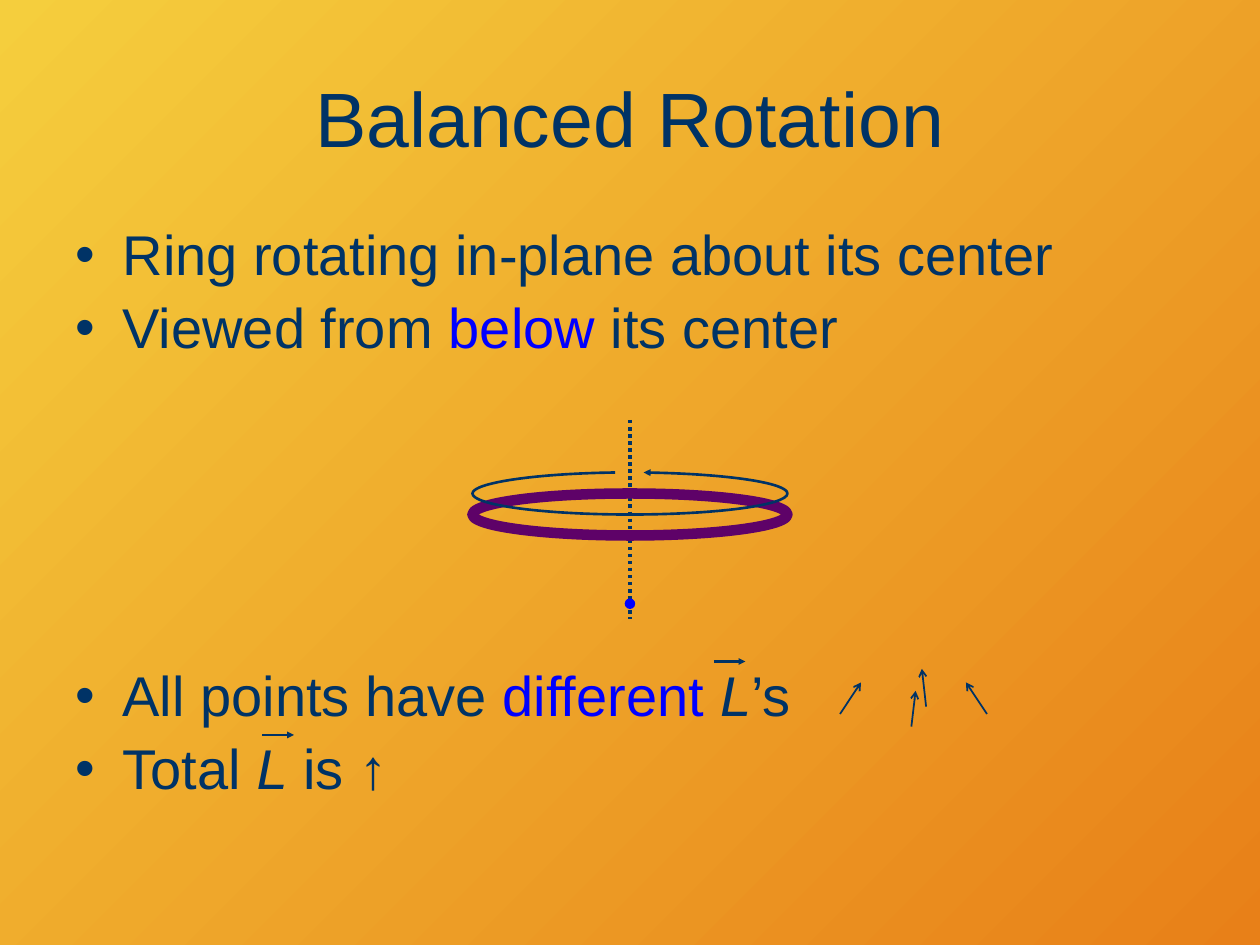
"""Build the Balanced Rotation slide."""
from lxml.etree import SubElement
from pptx import Presentation
from pptx.dml.color import RGBColor
from pptx.enum.dml import MSO_LINE
from pptx.enum.shapes import MSO_CONNECTOR, MSO_SHAPE
from pptx.enum.text import MSO_ANCHOR, PP_ALIGN
from pptx.oxml.ns import qn
from pptx.util import Emu, Pt

PX = 7620
FONT = "Arial"
NAVY = RGBColor(0x00, 0x33, 0x66)
BLUE = RGBColor(0x00, 0x00, 0xFF)
PURPLE = RGBColor(0x5E, 0x02, 0x68)
YELLOW = RGBColor(0xF5, 0xCE, 0x3D)
ORANGE = RGBColor(0xE8, 0x80, 0x18)

TITLE = "Balanced Rotation"
SETUP = (210, 70, [("Ring rotating in-plane about its center", NAVY, False)])
VIEW = (280, 80, [("Viewed from ", NAVY, False), ("below", BLUE, False),
                  (" its center", NAVY, False)])
PARTS = (630, 70, [("All points have ", NAVY, False), ("different ", BLUE, False),
                   ("L", NAVY, True), ("’s", NAVY, False)])
TOTAL = (700, 70, [("Total ", NAVY, False), ("L", NAVY, True),
                   (" is ↑", NAVY, False)])
AXIS = (600, 400, 600, 590)
RING = (450, 470, 300, 40)
VIEWPOINT = (595, 570, 10, 10)
SPIN_START = (613, 450)
SPIN_CURVES = [
    [(690, 451), (750, 460), (750, 470)],
    [(750, 481), (683, 490), (600, 490)],
    [(517, 490), (450, 481), (450, 470)],
    [(450, 460), (509, 451), (586, 450)],
]
PARTS_BAR = (680, 630, 710, 630)
TOTAL_BAR = (250, 700, 280, 700)
MOMENTA = [(800, 680, 820, 650), (940, 680, 920, 650),
           (868, 692, 872, 658), (882, 673, 878, 637)]


def px(*lengths):
    return [Emu(length * PX) for length in lengths]


def add_text(shapes, top, height, pieces, size):
    box = shapes.add_textbox(*px(60, top, 1080, height))
    box.text_frame.word_wrap = True
    paragraph = box.text_frame.paragraphs[0]
    for words, color, italic in pieces:
        run = paragraph.add_run()
        run.text = words
        run.font.name, run.font.size, run.font.italic = FONT, Pt(size), italic
        run.font.color.rgb = color
    return box.text_frame, paragraph


def add_bullet(shapes, top, height, pieces):
    paragraph = add_text(shapes, top, height, pieces, 32)[1]
    paragraph.line_spacing = 0.9
    paragraph.space_before = Pt(6.4)
    properties = paragraph._p.get_or_add_pPr()
    indent = px(45)[0]
    properties.set("marL", str(indent))
    properties.set("indent", str(-indent))
    SubElement(properties, qn("a:buFont")).set("typeface", FONT)
    SubElement(properties, qn("a:buChar")).set("char", "•")


def add_arrowhead(shape, end, kind):
    outline = shape.element.spPr.find(qn("a:ln"))
    SubElement(outline, qn(f"a:{end}"), type=kind, w="sm", len="sm")


def add_line(shapes, ends, width, head=None, dash=None):
    line = shapes.add_connector(MSO_CONNECTOR.STRAIGHT, *px(*ends))
    line.line.color.rgb = NAVY
    line.line.width = Pt(width)
    if dash:
        line.line.dash_style = dash
    if head:
        add_arrowhead(line, "tailEnd", head)
    SubElement(line.element.spPr, qn("a:effectLst"))


def add_ellipse(shapes, frame):
    ellipse = shapes.add_shape(MSO_SHAPE.OVAL, *px(*frame))
    ellipse.shadow.inherit = False
    return ellipse


def add_spin(shapes):
    builder = shapes.build_freeform(*SPIN_START, scale=PX)
    builder.add_line_segments(sum(SPIN_CURVES, []), close=False)
    spin = builder.convert_to_shape()
    outline = next(spin.element.iter(qn("a:path")))
    segments = outline.findall(qn("a:lnTo"))
    for first in range(0, len(segments), 3):
        curve = SubElement(outline, qn("a:cubicBezTo"))
        for segment in segments[first:first + 3]:
            curve.append(segment[0])
            outline.remove(segment)
    spin.shadow.inherit = False
    spin.fill.background()
    spin.line.color.rgb = NAVY
    spin.line.width = Pt(1.5)
    add_arrowhead(spin, "headEnd", "triangle")


def main():
    deck = Presentation()
    deck.slide_width, deck.slide_height = px(1200, 900)
    slide = deck.slides.add_slide(deck.slide_layouts[6])
    shapes = slide.shapes
    backdrop = slide.background.fill
    backdrop.gradient()
    backdrop.gradient_angle = 315
    for stop, color in zip(backdrop.gradient_stops, (YELLOW, ORANGE)):
        stop.color.rgb = color

    frame, heading = add_text(shapes, 36, 150, [(TITLE, NAVY, False)], 44)
    frame.vertical_anchor = MSO_ANCHOR.MIDDLE
    heading.alignment = PP_ALIGN.CENTER
    add_bullet(shapes, *SETUP)

    add_line(shapes, AXIS, 2, dash=MSO_LINE.ROUND_DOT)
    ring = add_ellipse(shapes, RING)
    ring.fill.background()
    ring.line.color.rgb = PURPLE
    ring.line.width = Pt(6)
    add_spin(shapes)
    viewpoint = add_ellipse(shapes, VIEWPOINT)
    viewpoint.fill.solid()
    viewpoint.fill.fore_color.rgb = BLUE
    viewpoint.line.fill.background()
    add_bullet(shapes, *VIEW)

    parts = shapes.add_group_shape().shapes
    add_bullet(parts, *PARTS)
    add_line(parts, PARTS_BAR, 1.5, "triangle")
    for momentum in MOMENTA:
        add_line(parts, momentum, 1, "arrow")

    total = shapes.add_group_shape().shapes
    add_line(total, TOTAL_BAR, 1.5, "triangle")
    add_bullet(total, *TOTAL)
    deck.save("out.pptx")


if __name__ == "__main__":
    main()
